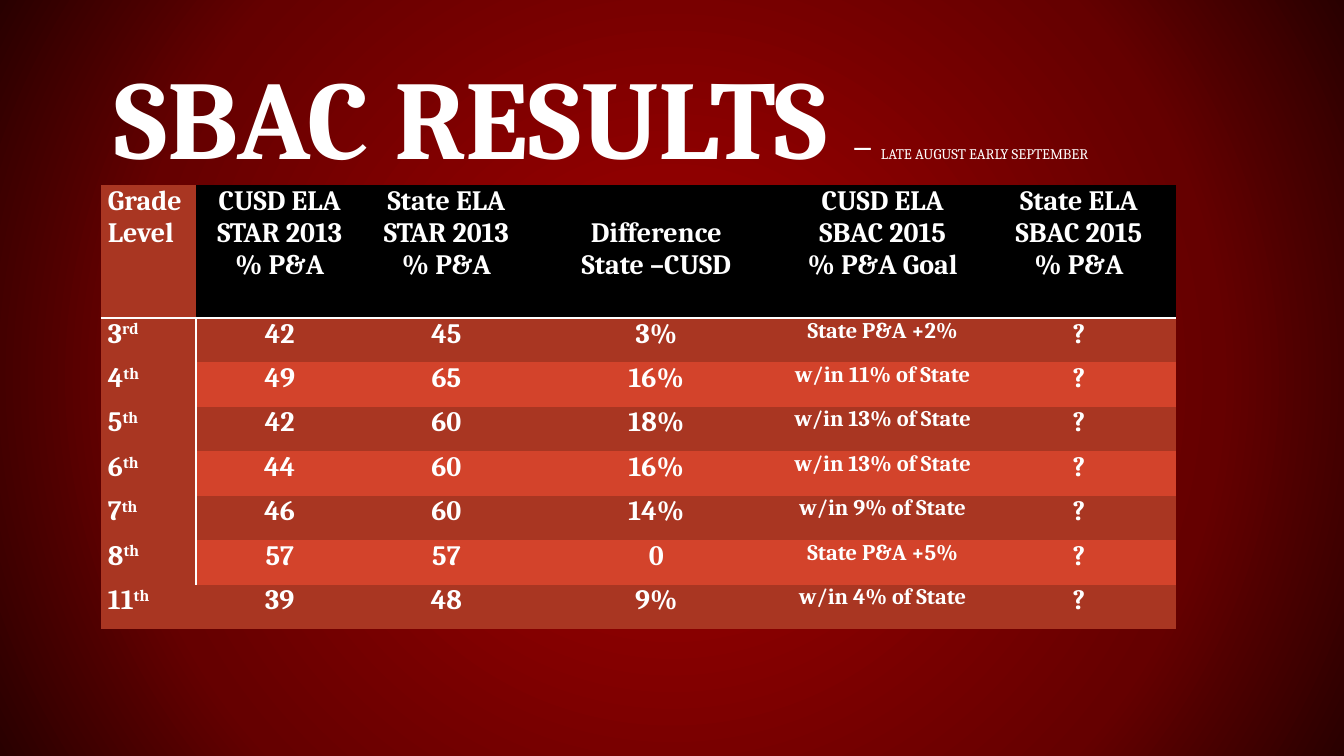
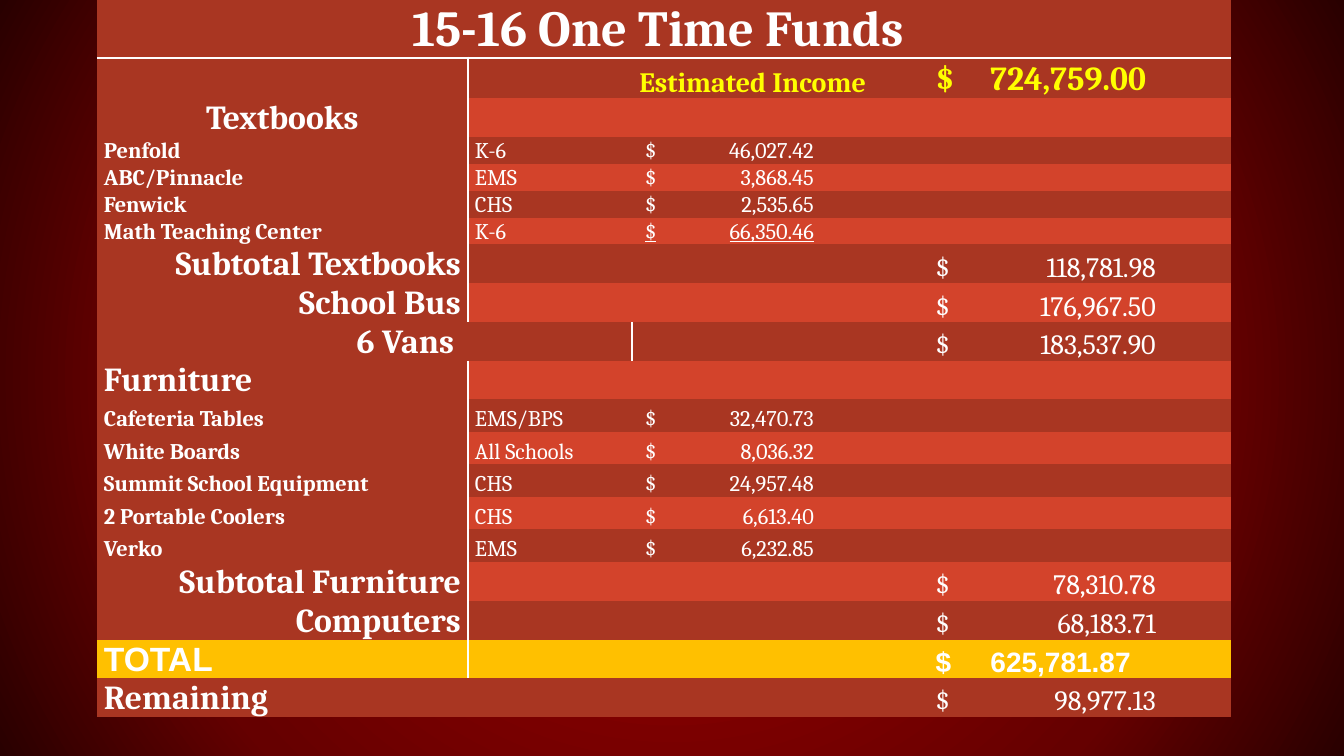
from pptx import Presentation
from pptx.dml.color import RGBColor
from pptx.enum import text as tx
from pptx.oxml import parse_xml
from pptx.oxml.ns import nsdecls
from pptx.util import Cm, Pt

WHITE, BLACK, YELLOW, GOLD = "FFFFFF", "000000", "FFFF00", "FFC000"
BANDS = ("A93622", "D3432B")
GLOW = ((17, "960000"), (71, "650000"), (100, "290000"))
PLAIN_STYLE = "{2D5ABB26-0587-4C30-8999-92F81FD0307C}"
SIDE = 0.18
ALIGN = tx.PP_ALIGN
TOP, BOTTOM = tx.MSO_ANCHOR.TOP, tx.MSO_ANCHOR.BOTTOM


# Shared helpers
def rgb(code):
    return RGBColor.from_string(code)


def set_backdrop(master):
    """Red radial glow behind every slide."""
    master.background.fill.gradient()
    linear = master.element.xpath("./p:cSld/p:bg/p:bgPr/a:gradFill")[0]
    stops = "".join(f'<a:gs pos="{pos * 1000}"><a:srgbClr val="{code}"/></a:gs>'
                    for pos, code in GLOW)
    linear.getparent().replace(linear, parse_xml(
        f'<a:gradFill {nsdecls("a")} rotWithShape="1"><a:gsLst>{stops}</a:gsLst>'
        '<a:path path="circle"><a:fillToRect l="50000" t="50000" r="50000" b="50000"/>'
        '</a:path></a:gradFill>'))


def style_paragraph(paragraph, size=None, bold=True, color=WHITE, face="Cambria",
                    align=ALIGN.LEFT, spacing=None):
    font = paragraph.font
    font.name, font.bold = face, bold
    font.color.rgb = rgb(color)
    if size:
        font.size = Pt(size)
    paragraph.alignment = align
    paragraph.line_spacing = spacing


def fill_cell(cell, band, words="", anchor=TOP, left=SIDE, top=0, borders="", **style):
    """Write a cell; borders names its white edges, such as "RB"."""
    for edge in borders:
        cell._tc.get_or_add_tcPr().append(parse_xml(
            f'<a:ln{edge} {nsdecls("a")} w="25400"><a:solidFill><a:srgbClr val="{WHITE}"/>'
            f'</a:solidFill></a:ln{edge}>'))
    cell.fill.solid()
    cell.fill.fore_color.rgb = rgb(band)
    cell.margin_left, cell.margin_right = Cm(left), Cm(SIDE)
    cell.margin_top, cell.margin_bottom = Cm(top), 0
    cell.vertical_anchor = anchor
    cell.text_frame.text = words
    for paragraph in cell.text_frame.paragraphs:
        style_paragraph(paragraph, **style)


def add_grid(slide, left, top, widths, heights):
    grid = slide.shapes.add_table(len(heights), len(widths), Cm(left), Cm(top),
                                  Cm(sum(widths)), Cm(sum(heights))).table
    grid.first_row = grid.horz_banding = False
    grid._tbl.tblPr.xpath("./a:tableStyleId")[0].text = PLAIN_STYLE
    for column, width in zip(grid.columns, widths):
        column.width = Cm(width)
    for row, height in zip(grid.rows, heights):
        row.height = Cm(height)
    return grid


# Test results slide
RESULT_HEADS = ("Grade Level", "CUSD ELA STAR 2013\n% P&A", "State ELA STAR 2013\n% P&A",
                "Difference\nState –CUSD", "CUSD ELA SBAC 2015\n% P&A Goal",
                "State ELA SBAC 2015\n% P&A")
RESULTS = (
    ("3", "rd", "42", "45", "3%", "State P&A +2%"),
    ("4", "th", "49", "65", "16%", "w/in 11% of State"),
    ("5", "th", "42", "60", "18%", "w/in 13% of State"),
    ("6", "th", "44", "60", "16%", "w/in 13% of State"),
    ("7", "th", "46", "60", "14%", "w/in 9% of State"),
    ("8", "th", "57", "57", "0", "State P&A +5%"),
    ("11", "th", "39", "48", "9%", "w/in 4% of State"),
)


def add_title(slide, left, top, width, height):
    frame = slide.shapes.add_textbox(Cm(left), Cm(top), Cm(width), Cm(height)).text_frame
    frame.word_wrap = True
    frame.vertical_anchor = BOTTOM
    frame.margin_left = frame.margin_right = Cm(0.35)
    frame.margin_top = frame.margin_bottom = Cm(0.18)
    title = frame.paragraphs[0]
    style_paragraph(title, bold=False, spacing=0.8)
    for words, size, bold in (("SBAC RESULTS ", 80, True), ("– ", 28, False),
                              ("LATE AUGUST EARLY SEPTEMBER", 10.5, False)):
        run = title.add_run()
        run.text = words
        run.font.size, run.font.bold = Pt(size), bold


def add_results(slide, left, top):
    grid = add_grid(slide, left, top, (2.4, 4.22, 4.18, 6.4, 5.01, 4.88),
                    [3.35] + [1.12] * len(RESULTS))
    # Heading row
    for col, head in enumerate(RESULT_HEADS):
        fill_cell(grid.cell(0, col), BLACK if col else BANDS[0], head, size=20, borders="B",
                  top=0.82 if head.startswith("Difference") else 0,
                  align=ALIGN.CENTER if col else ALIGN.JUSTIFY)
    # One row per grade
    for row, (grade, suffix, *scores, goal) in enumerate(RESULTS, 1):
        grade_cell = grid.cell(row, 0)
        fill_cell(grade_cell, BANDS[0], grade, size=20, align=ALIGN.JUSTIFY,
                  borders="R" if row < len(RESULTS) else "")
        ordinal = grade_cell.text_frame.paragraphs[0].add_run()
        ordinal.text = suffix
        ordinal._r.get_or_add_rPr().set("baseline", "30000")
        for col, words in enumerate((*scores, goal, "?"), 1):
            fill_cell(grid.cell(row, col), BANDS[(row - 1) % 2], words,
                      size=16 if words == goal else 20, align=ALIGN.CENTER)


def build_results_slide(slide):
    add_title(slide, 2.54, 1.35, 28.78, 3.38)
    add_results(slide, 2.54, 4.66)


# One time funds slide
TIGHT = 0.95
# Row kinds: height, label size, label alignment
KINDS = {
    "heading": (0.97, 24, ALIGN.CENTER),
    "section": (0.97, 24, ALIGN.LEFT),
    "sum": (0.98, 24, ALIGN.RIGHT),
    "book": (0.65, 16, ALIGN.LEFT),
    "item": (0.82, 16, ALIGN.LEFT),
}
FUNDS = (
    ("section", "", "", "Estimated Income", "724,759.00"),
    ("heading", "Textbooks", "", "", ""),
    ("book", "Penfold", "K-6", "46,027.42", ""),
    ("book", "ABC/Pinnacle", "EMS", "3,868.45", ""),
    ("book", "Fenwick", "CHS", "2,535.65", ""),
    ("book", "Math Teaching Center", "K-6", "66,350.46", ""),
    ("sum", "Subtotal Textbooks", "", "", "118,781.98"),
    ("sum", "School Bus", "", "", "176,967.50"),
    ("section", "6 Vans", "", "", "183,537.90"),
    ("section", "Furniture", "", "", ""),
    ("item", "Cafeteria Tables", "EMS/BPS", "32,470.73", ""),
    ("item", "White Boards", "All Schools", "8,036.32", ""),
    ("item", "Summit School Equipment", "CHS", "24,957.48", ""),
    ("item", "2 Portable Coolers", "CHS", "6,613.40", ""),
    ("item", "Verko", "EMS", "6,232.85", ""),
    ("sum", "Subtotal Furniture", "", "", "78,310.78"),
    ("sum", "Computers", "", "", "68,183.71"),
    ("section", "TOTAL", "", "", "625,781.87"),
    ("section", "Remaining", "", "", "98,977.13"),
)


def fill_money(cell, band, amount, tab, side="r", **style):
    """Dollar sign at the left, the amount set on a tab stop."""
    fill_cell(cell, band, f"$\t{amount}" if amount else "", BOTTOM, left=0.33,
              spacing=TIGHT, **style)
    if amount:
        properties = cell.text_frame.paragraphs[0]._p.get_or_add_pPr()
        properties.xpath("./a:lnSpc")[0].addnext(parse_xml(
            f'<a:tabLst {nsdecls("a")}><a:tab pos="{Cm(tab)}" algn="{side}"/></a:tabLst>'))


def add_funds(slide, left, top):
    heights = [1.46] + [KINDS[kind][0] for kind, *_ in FUNDS]
    grid = add_grid(slide, left, top, (9.35, 4.14, 7.32, 7.77), heights)
    # Title row
    for col in range(4):
        fill_cell(grid.cell(0, col), BANDS[0], "" if col else "15-16 One Time Funds ", BOTTOM,
                  size=36, align=ALIGN.CENTER, borders="B", spacing=TIGHT)
    grid.cell(0, 0).merge(grid.cell(0, 3))
    # Income, spending and totals
    for row, (kind, label, site, cost, amount) in enumerate(FUNDS, 1):
        label_cell, site_cell, cost_cell, amount_cell = (grid.cell(row, c) for c in range(4))
        _, size, align = KINDS[kind]
        income, total, vans = row == 1, label == "TOTAL", label == "6 Vans"
        band = GOLD if total else BANDS[(row - 1) % 2]
        face = "Arial" if total else "Cambria"
        fill_cell(label_cell, GOLD if total else BANDS[0], label, BOTTOM, size=size,
                  align=align, face=face, spacing=TIGHT,
                  borders="" if label == "Remaining" else "R")
        fill_cell(site_cell, band, site, BOTTOM, size=16, bold=False, spacing=TIGHT,
                  borders="R" if vans else "")
        if vans:
            label_cell.text_frame.paragraphs[0]._p.get_or_add_pPr().set("marL", str(Cm(6.37)))
            label_cell.merge(site_cell)
        if income:
            fill_cell(cost_cell, band, cost, BOTTOM, size=20, color=YELLOW, spacing=TIGHT)
        else:
            fill_money(cost_cell, band, cost, 4.25, size=16, bold=False)
        if income or total:
            fill_money(amount_cell, band, amount, 1.38, "l", size=24 if income else 20,
                       color=YELLOW if income else WHITE, face=face)
        else:
            fill_money(amount_cell, band, amount, 5.55, size=20 if amount else 16, bold=False)
        if label == "Math Teaching Center":
            cost_cell.text_frame.paragraphs[0].font.underline = True


def build_funds_slide(slide):
    add_funds(slide, 2.44, 0)


def main():
    prs = Presentation()
    prs.slide_width, prs.slide_height = Cm(33.87), Cm(19.05)
    set_backdrop(prs.slide_master)
    for build in (build_results_slide, build_funds_slide):
        build(prs.slides.add_slide(prs.slide_layouts[6]))
    prs.save("out.pptx")


if __name__ == "__main__":
    main()
